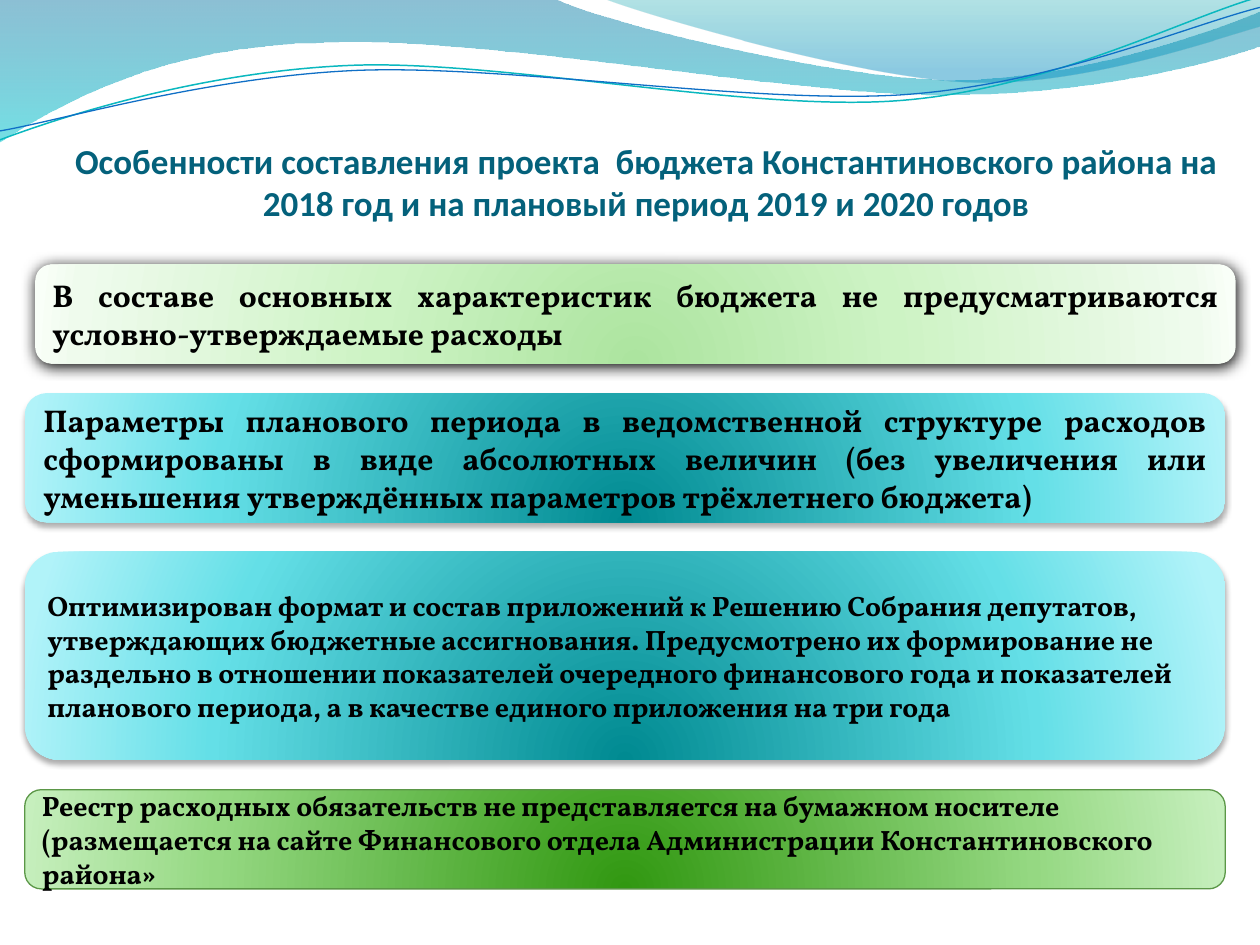
from lxml.etree import SubElement
from pptx import Presentation
from pptx.dml.color import RGBColor
from pptx.enum.shapes import MSO_SHAPE
from pptx.enum.text import MSO_ANCHOR, PP_ALIGN
from pptx.oxml.ns import qn
from pptx.util import Cm, Pt

UNITS_PER_CM = 100
BOX_WIDTH = 24.2
TEAL = [(0, "008A91"), (68, "64DFE7"), (100, "B1F3F9")]
MINT = [(0, "ACE49F"), (43, "CDF3C4"), (93, "EFFBED"), (100, "F9FFF8")]
GREEN = [(0, "319811"), (68, "95D882"), (100, "C6EFBD")]
SOFT_SHADOW = ("000000", 32, 3.5, 2.2)

WAVES = [
    ((0, -0.03), [
        [(11.18, -0.03)],
        [(12.09, 0.43), (16.87, 1.6), (19.25, 1.6)],
        [(21.67, 1.6), (24.33, 0.66), (25.4, 0.23)],
        [(25.43, 0.91)],
        [(24.97, 1.12), (22.1, 1.93), (18.95, 1.91)],
        [(15.8, 1.91), (9.7, 0.71), (6.53, 0.86)],
        [(3.28, 0.89), (1.17, 2.11), (-0.03, 2.87)],
        [(0, -0.03)],
    ], [(0, "0074A1", 45), (100, "00C6CF", 55)]),
    ((12.17, -0.03), [
        [(12.93, 0.28), (17.32, 1.57), (19.53, 1.65)],
        [(21.74, 1.75), (24.41, 0.81), (25.4, 0.53)],
        [(25.4, 0)],
        [(12.17, -0.03)],
    ], [(0, "00A1A9", 30), (80, "008BBF", 45)]),
]

STRANDS = [
    ((0, 2.82), [
        [(1.22, 2.36), (4.01, 1.45), (7.04, 1.32)],
        [(10.03, 1.19), (15.06, 2.26), (18.11, 2.03)],
        [(21.16, 1.8), (23.83, 0.38), (25.35, -0.05)],
    ], "0AB8BF", 0.85),
    ((0, 2.64), [
        [(1.19, 2.44), (4.17, 1.55), (7.19, 1.42)],
        [(10.24, 1.3), (15.16, 2.11), (18.21, 1.91)],
        [(21.23, 1.7), (23.9, 0.53), (25.4, 0.15)],
    ], "0F6FC6", 0.75),
]

TITLE = ("Особенности составления проекта  бюджета Константиновского района на\v"
         "2018 год и на плановый период 2019 и 2020 годов")

BOXES = [
    (0.71, 5.33, 2, MINT, ("000000", 100, 8.5, 1), None, 18, PP_ALIGN.JUSTIFY,
     "В составе основных характеристик бюджета не предусматриваются "
     "условно-утверждаемые расходы"),
    (0.5, 7.93, 2.6, TEAL, SOFT_SHADOW, None, 18, PP_ALIGN.JUSTIFY,
     "Параметры планового периода в ведомственной структуре расходов "
     "сформированы в виде абсолютных величин (без увеличения или уменьшения "
     "утверждённых параметров трёхлетнего бюджета)"),
    (0.5, 11.12, 4.2, TEAL, SOFT_SHADOW, None, 16, PP_ALIGN.LEFT,
     "Оптимизирован формат и состав приложений к Решению Собрания депутатов, "
     "утверждающих бюджетные ассигнования. Предусмотрено их формирование не "
     "раздельно в отношении показателей очередного финансового года и показателей "
     "планового периода, а в качестве единого приложения на три года"),
    (0.5, 15.92, 2, GREEN, None, "5B9747", 16, PP_ALIGN.LEFT,
     "Реестр расходных обязательств не представляется на бумажном носителе\n"
     "(размещается на сайте Финансового отдела Администрации Константиновского района»"),
]


def color(value):
    return RGBColor.from_string(value)


def add_color(parent, value, opacity):
    element = SubElement(parent, qn("a:srgbClr"), val=value)
    if opacity < 100:
        SubElement(element, qn("a:alpha"), val=str(opacity * 1000))


def set_gradient(shape, stops, radial):
    shape.fill.gradient()
    gradient = shape._element.spPr.find(qn("a:gradFill"))
    for child in list(gradient):
        gradient.remove(child)
    stop_list = SubElement(gradient, qn("a:gsLst"))
    for position, value, *opacity in stops:
        stop = SubElement(stop_list, qn("a:gs"), pos=str(position * 1000))
        add_color(stop, value, opacity[0] if opacity else 100)
    if radial:
        center = SubElement(gradient, qn("a:path"), path="circle")
        SubElement(center, qn("a:fillToRect"), l="50000", t="130000", r="50000", b="-30000")
    else:
        SubElement(gradient, qn("a:lin"), ang="5400000", scaled="0")


def set_shadow(shape, value, opacity, blur, distance):
    effects = shape._element.spPr.find(qn("a:effectLst"))
    shadow = SubElement(effects, qn("a:outerShdw"), blurRad=str(Pt(blur)),
                        dist=str(Pt(distance)), dir="5400000", rotWithShape="0")
    add_color(shadow, value, opacity)


def set_line(shape, value, width=0.75):
    if value is None:
        shape.line.fill.background()
    else:
        shape.line.color.rgb = color(value)
        shape.line.width = Pt(width)


def to_units(point):
    return tuple(round(value * UNITS_PER_CM) for value in point)


def bend_segments(shape, segments):
    steps = iter(list(shape._element.spPr.iter(qn("a:lnTo"))))
    for segment in segments:
        first, *others = [next(steps) for _ in segment]
        if others:
            first.tag = qn("a:cubicBezTo")
        for step in others:
            first.append(step[0])
            step.getparent().remove(step)


def add_outline(slide, start, segments, close):
    builder = slide.shapes.build_freeform(*to_units(start), scale=Cm(1) / UNITS_PER_CM)
    points = [to_units(point) for segment in segments for point in segment]
    builder.add_line_segments(points, close=close)
    shape = builder.convert_to_shape()
    bend_segments(shape, segments)
    shape.shadow.inherit = False
    return shape


def add_wave(slide, start, segments, stops):
    wave = add_outline(slide, start, segments, True)
    set_gradient(wave, stops, False)
    set_line(wave, None)


def add_strand(slide, start, segments, value, width):
    strand = add_outline(slide, start, segments, False)
    strand.fill.background()
    set_line(strand, value, width)


def set_text(text_frame, text, font_name, size, value, alignment, anchor):
    text_frame.text = text
    text_frame.word_wrap = True
    text_frame.vertical_anchor = anchor
    for paragraph in text_frame.paragraphs:
        paragraph.alignment = alignment
        for run in paragraph.runs:
            run.font.name = font_name
            run.font.size = Pt(size)
            run.font.bold = True
            run.font.color.rgb = color(value)


def add_title(slide):
    text_frame = slide.shapes.add_textbox(Cm(1.5), Cm(1.32), Cm(23.06), Cm(3.18)).text_frame
    text_frame.margin_left = text_frame.margin_right = text_frame.margin_bottom = Cm(0)
    set_text(text_frame, TITLE, "Calibri", 20, "04617B", PP_ALIGN.CENTER, MSO_ANCHOR.BOTTOM)


def add_box(slide, left, top, height, stops, shadow, border, size, alignment, text):
    box = slide.shapes.add_shape(MSO_SHAPE.ROUNDED_RECTANGLE,
                                 Cm(left), Cm(top), Cm(BOX_WIDTH), Cm(height))
    box.shadow.inherit = False
    set_gradient(box, stops, True)
    set_line(box, border)
    if shadow:
        set_shadow(box, *shadow)
    set_text(box.text_frame, text, "Vollkorn", size, "000000", alignment, MSO_ANCHOR.MIDDLE)


def main():
    presentation = Presentation()
    presentation.slide_width, presentation.slide_height = Cm(25.4), Cm(19.05)
    slide = presentation.slides.add_slide(presentation.slide_layouts[6])
    for wave in WAVES:
        add_wave(slide, *wave)
    for strand in STRANDS:
        add_strand(slide, *strand)
    add_title(slide)
    for box in BOXES:
        add_box(slide, *box)
    presentation.save("out.pptx")


if __name__ == "__main__":
    main()
